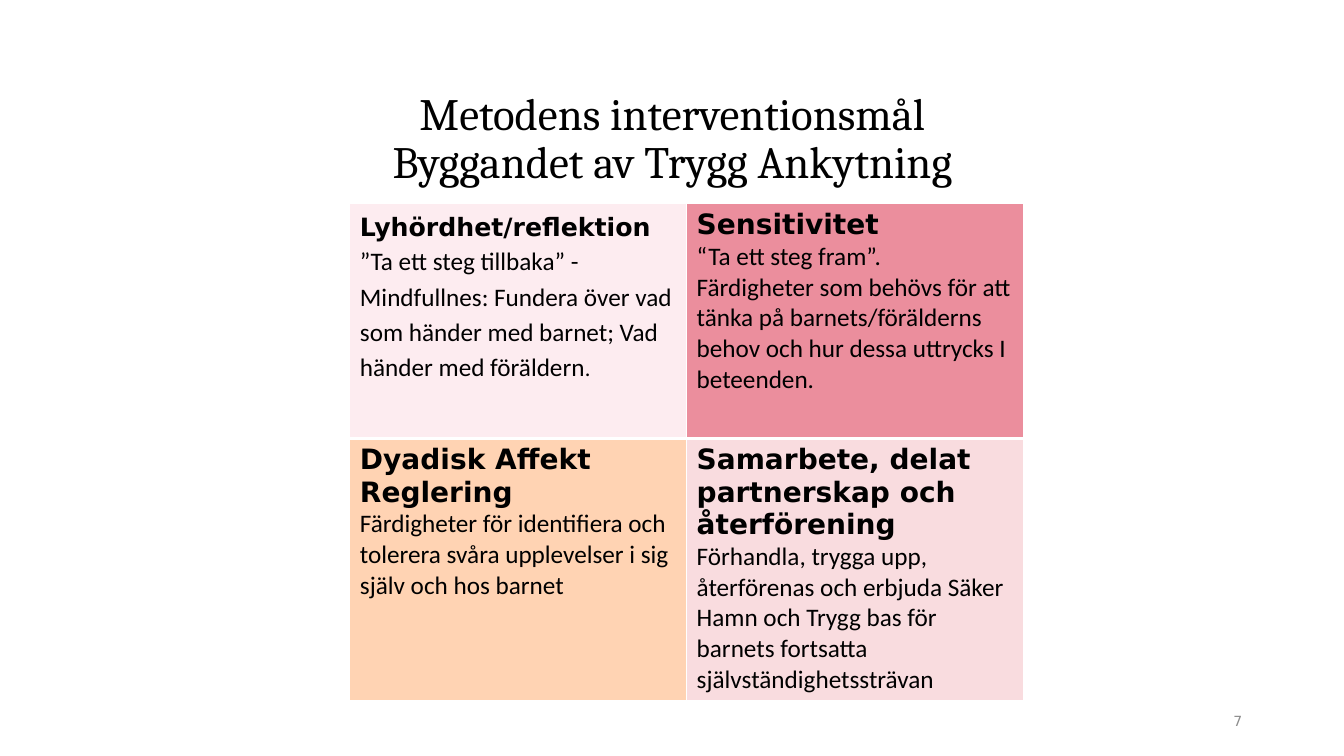
"""Build a slide with four goals for secure attachment in a two-by-two table."""
from dataclasses import dataclass

from lxml import etree
from pptx import Presentation
from pptx import util as u
from pptx.dml import color
from pptx.enum import text
from pptx.oxml import ns

COLORS = {
    "ink": "000000",
    "border": "FFFFFF",
    "number": "8C8C8C",
    "reflection": "FDECF0",
    "sensitivity": "EB8E9D",
    "regulation": "FFD3B3",
    "partnership": "F9DCDF",
}
HEADING_FONT, BODY_FONT, TITLE_FONT = "DejaVu Sans", "Calibri", "Cambria"


@dataclass(frozen=True)
class Goal:
    heading: str
    body: tuple[str, ...]
    fill: str
    heading_size: int = 20
    line_spacing: float = 1.0
    end_mark: str = ""


@dataclass(frozen=True)
class Label:
    wording: str
    box: tuple[float, float, float, float]
    font: str
    size: int
    color: str
    align: text.PP_ALIGN
    line_spacing: float = 1.0
    inset: tuple[float, float] = (0.1, 0.05)


GOALS = (
    (
        Goal("Lyhördhet/reflektion",
             ("”Ta ett steg tillbaka” - Mindfullnes: Fundera över vad som händer "
              "med barnet; Vad händer med föräldern",),
             "reflection", heading_size=18, line_spacing=1.15, end_mark="."),
        Goal("Sensitivitet",
             ("“Ta ett steg fram”.",
              "Färdigheter som behövs för att tänka på barnets/förälderns behov "
              "och hur dessa uttrycks I beteenden."),
             "sensitivity"),
    ),
    (
        Goal("Dyadisk Affekt Reglering",
             ("Färdigheter för identifiera och tolerera svåra upplevelser i sig "
              "själv och hos barnet",),
             "regulation"),
        Goal("Samarbete, delat partnerskap och återförening",
             ("Förhandla, trygga upp, återförenas och erbjuda Säker Hamn och "
              "Trygg bas för barnets fortsatta självständighetssträvan",),
             "partnership"),
    ),
)
LABELS = (
    Label("Metodens interventionsmål\vByggandet av Trygg Ankytning",
          (0.92, 0.83, 11.5, 1.12), TITLE_FONT, 32, "ink",
          text.PP_ALIGN.CENTER, line_spacing=0.9, inset=(0, 0)),
    Label("7", (9.42, 6.95, 3, 0.4), HEADING_FONT, 10, "number",
          text.PP_ALIGN.RIGHT),
)
TABLE_LEFT, TABLE_TOP, COLUMN_WIDTH = 3.47, 2.02, 3.34
ROW_HEIGHTS = (2.33, 2.6)


def rgb(name: str) -> color.RGBColor:
    return color.RGBColor.from_string(COLORS[name])


def style(run, font: str, size: int, ink: str = "ink", bold: bool = False) -> None:
    run.font.name = font
    run.font.size = u.Pt(size)
    run.font.bold = bold
    run.font.color.rgb = rgb(ink)


def add_label(slide, label: Label) -> None:
    frame = slide.shapes.add_textbox(*map(u.Inches, label.box)).text_frame
    frame.word_wrap = True
    frame.vertical_anchor = text.MSO_ANCHOR.MIDDLE
    frame.margin_left = frame.margin_right = u.Inches(label.inset[0])
    frame.margin_top = frame.margin_bottom = u.Inches(label.inset[1])
    wording = frame.paragraphs[0]
    wording.text = label.wording
    wording.alignment = label.align
    wording.line_spacing = label.line_spacing
    for run in wording.runs:
        style(run, label.font, label.size, label.color)


def add_borders(cell, bottom_width: int) -> None:
    properties = cell._tc.get_or_add_tcPr()
    for side, width in zip("LRTB", (1, 1, 1, bottom_width)):
        line = etree.SubElement(properties, ns.qn(f"a:ln{side}"), w=str(u.Pt(width)))
        paint = etree.SubElement(line, ns.qn("a:solidFill"))
        etree.SubElement(paint, ns.qn("a:srgbClr"), val=COLORS["border"])


def fill_goal(cell, goal: Goal, bottom_width: int) -> None:
    add_borders(cell, bottom_width)
    cell.fill.solid()
    cell.fill.fore_color.rgb = rgb(goal.fill)
    cell.text_frame.text = "\n".join((goal.heading, *goal.body))
    heading, *body = cell.text_frame.paragraphs
    style(heading.runs[0], HEADING_FONT, goal.heading_size, bold=True)
    for sentence in body:
        style(sentence.runs[0], BODY_FONT, 18)
    if goal.end_mark:
        mark = body[-1].add_run()
        mark.text = goal.end_mark
        style(mark, BODY_FONT, 16)
    for line in (heading, *body):
        line.line_spacing = goal.line_spacing


def add_goals(slide) -> None:
    columns = len(GOALS[0])
    goals = slide.shapes.add_table(
        len(GOALS), columns, u.Inches(TABLE_LEFT), u.Inches(TABLE_TOP),
        u.Inches(COLUMN_WIDTH * columns), u.Inches(sum(ROW_HEIGHTS))).table
    for column in goals.columns:
        column.width = u.Inches(COLUMN_WIDTH)
    for row_index, (row, height) in enumerate(zip(GOALS, ROW_HEIGHTS)):
        goals.rows[row_index].height = u.Inches(height)
        for column_index, goal in enumerate(row):
            fill_goal(goals.cell(row_index, column_index), goal,
                      bottom_width=3 if row_index == 0 else 1)


def main() -> None:
    deck = Presentation()
    deck.slide_width, deck.slide_height = u.Inches(13.33), u.Inches(7.5)
    slide = deck.slides.add_slide(deck.slide_layouts[6])
    title, number = LABELS
    add_label(slide, title)
    add_goals(slide)
    add_label(slide, number)
    deck.save("out.pptx")


if __name__ == "__main__":
    main()
